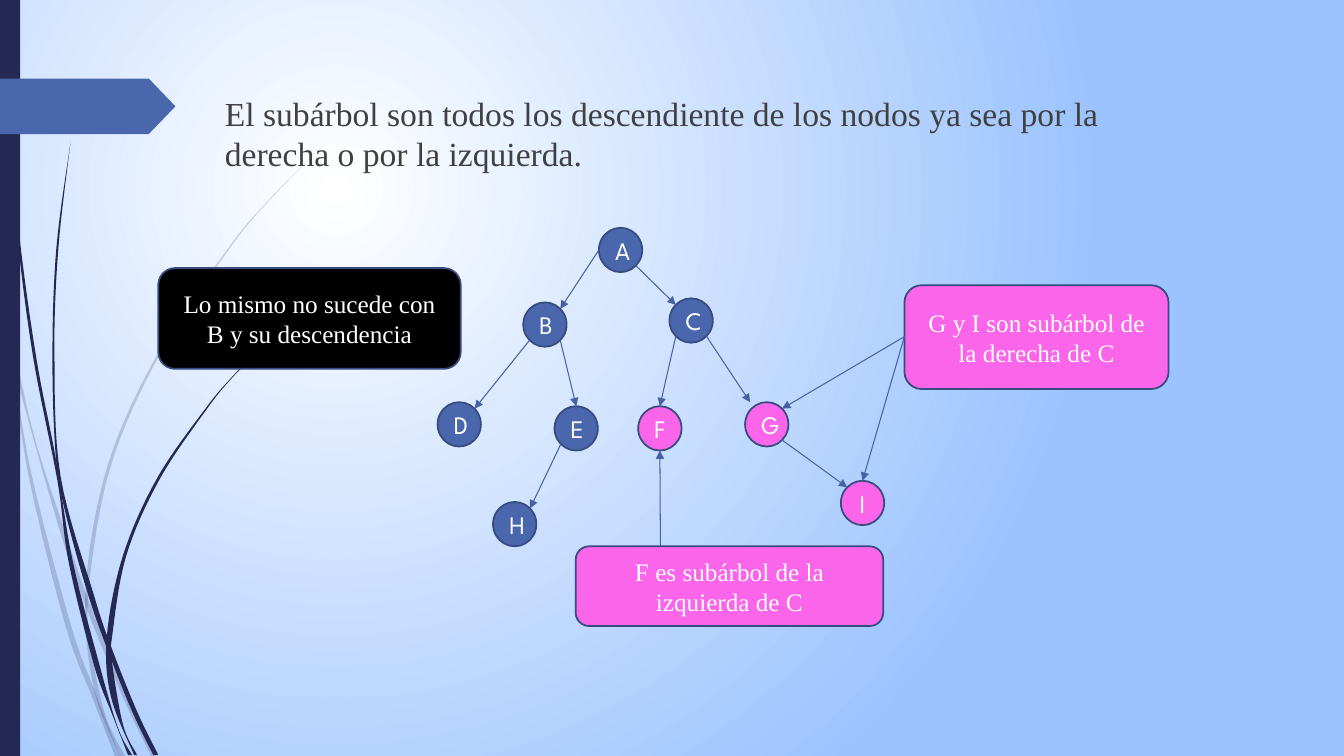
from dataclasses import dataclass
from math import sqrt

from lxml import etree
from pptx import Presentation
from pptx.dml.color import RGBColor
from pptx.enum.shapes import MSO_CONNECTOR, MSO_SHAPE
from pptx.enum.text import MSO_ANCHOR, MSO_AUTO_SIZE, PP_ALIGN
from pptx.oxml.ns import qn
from pptx.util import Inches, Pt

CIRCLE = MSO_SHAPE.FLOWCHART_CONNECTOR
ROUNDED = MSO_SHAPE.ROUNDED_RECTANGLE
RECTANGLE = MSO_SHAPE.RECTANGLE
TAG = MSO_SHAPE.PENTAGON
STRAIGHT = MSO_CONNECTOR.STRAIGHT
CENTER, LEFT = PP_ALIGN.CENTER, PP_ALIGN.LEFT
MIDDLE, TOP = MSO_ANCHOR.MIDDLE, MSO_ANCHOR.TOP
NO_AUTOFIT = MSO_AUTO_SIZE.NONE


@dataclass(frozen=True)
class Theme:
    navy: str = "242852"
    blue: str = "4A66AC"
    outline: str = "374B7F"
    arrow: str = "4761A4"
    pink: str = "FB65E9"
    black: str = "000000"
    white: str = "FFFFFF"
    text: str = "404040"
    sky: str = "9BC3FE"
    serif: str = "Times New Roman"
    label_font: str = "League Spartan"
    intro_size: int = 24
    label_size: int = 18


T = Theme()
SLIDE_W, SLIDE_H = 13.33, 7.5
NODE_W, NODE_H = 0.43, 0.44

INTRO = ("El subárbol son todos los descendiente de los nodos "
         "ya sea por la derecha o por la izquierda.")
NODES = {
    "A": (5.94, 2.26, T.blue), "B": (5.19, 3.0, T.blue), "C": (6.64, 2.96, T.blue),
    "D": (4.34, 3.99, T.blue), "E": (5.5, 4.03, T.blue), "F": (6.33, 4.03, T.pink),
    "G": (7.39, 3.99, T.pink), "H": (4.89, 4.98, T.blue), "I": (8.34, 4.77, T.pink),
}
# Ends are (node, compass point)
EDGES = [
    (("A", "W"), ("B", "NE")), (("A", "SE"), ("C", "NW")),
    (("B", "SW"), ("D", "NE")), (("B", "SE"), ("E", "N")),
    (("C", "SW"), ("F", "N")), (("E", "SW"), ("H", "NE")),
    (("G", "SE"), ("I", "NW")),
]
CALLOUTS = [
    ("G y I son subárbol de la derecha de C", (8.97, 2.83, 2.62, 1.03), T.pink),
    ("F es subárbol de la izquierda de C", (5.71, 5.42, 3.05, 0.79), T.pink),
    ("Lo mismo no sucede con B y su descendencia", (1.57, 2.66, 3, 1), T.black),
]
# Each strand has a forward edge and a returning edge
PALE_STRANDS = [
    ([(0, 2.82), (0.14, 3.45), (0.34, 4.33), (0.62, 5.2), (0.88, 5.96), (1.27, 6.92), (1.55, 7.5)],
     [(1.5, 7.5), (1.23, 6.94), (0.84, 5.99), (0.58, 5.22), (0.17, 3.76), (0, 2.99)]),
    ([(0.11, 3.5), (0.31, 4.69), (0.7, 6.19), (0.93, 6.83), (1.19, 7.5)],
     [(1.14, 7.5), (0.92, 6.93), (0.65, 6.21), (0.28, 4.7), (0.11, 3.5)]),
    ([(3.12, 1.53), (2.68, 1.97), (2.28, 2.44), (1.58, 3.48), (1.07, 4.61), (0.85, 5.84),
      (0.93, 6.83), (1.19, 7.5)],
     [(1.24, 7.5), (1.05, 7.11), (0.91, 6.46), (0.88, 5.84), (1.1, 4.62), (1.6, 3.49),
      (2.29, 2.45), (2.68, 1.98), (3.12, 1.53)]),
]
DARK_STRANDS = [
    ([(0.04, 0), (0.08, 1.09), (0.19, 2.32), (0.36, 3.55), (0.55, 4.53), (0.72, 5.56),
      (0.98, 6.57), (1.17, 7.22), (1.31, 7.49)],
     [(1.27, 7.49), (1.11, 7.08), (0.93, 6.59), (0.68, 5.57), (0.57, 4.77), (0.33, 3.55),
      (0.17, 2.33), (0.07, 1.1), (0.03, 0)]),
    ([(0.7, 1.41), (0.56, 2.45), (0.52, 3.49), (0.55, 4.49), (0.64, 5.05), (0.88, 5.92),
      (1.11, 6.56), (1.32, 7.08), (1.52, 7.49)],
     [(1.57, 7.49), (1.36, 7.06), (1.1, 6.41), (0.93, 5.9), (0.6, 4.72), (0.54, 3.49),
      (0.58, 2.45), (0.7, 1.41)]),
    ([(2.6, 3.44), (2.31, 3.73), (2.04, 4.05), (1.56, 4.74), (1.22, 5.51), (1.06, 6.31),
      (1.1, 6.91), (1.33, 7.49)],
     [(1.36, 7.49), (1.22, 7.19), (1.11, 6.56), (1.11, 6.33), (1.25, 5.52), (1.58, 4.76),
      (2.05, 4.06), (2.31, 3.74), (2.61, 3.44)]),
]


def set_all(target, values):
    for name, value in values.items():
        setattr(target, name, value)


def paint(sp, fill, line=None):
    sp.shadow.inherit = False
    sp.fill.solid()
    sp.fill.fore_color.rgb = RGBColor.from_string(fill)
    if line:
        sp.line.color.rgb = RGBColor.from_string(line)
        sp.line.width = Pt(1.25)
    else:
        sp.line.fill.background()


def write(tf, text, font, size, color, align=CENTER, anchor=MIDDLE):
    set_all(tf, {"word_wrap": True, "auto_size": NO_AUTOFIT, "vertical_anchor": anchor})
    p = tf.paragraphs[0]
    p.alignment = align
    r = p.add_run()
    r.text = text
    set_all(r.font, {"name": font, "size": Pt(size)})
    r.font.color.rgb = RGBColor.from_string(color)
    return p


def add_box(s, kind, box, fill, line=None):
    sp = s.shapes.add_shape(kind, *map(Inches, box))
    paint(sp, fill, line)
    return sp


def add_label(s, kind, box, fill, text, font):
    sp = add_box(s, kind, box, fill, T.outline)
    write(sp.text_frame, text, font, T.label_size, T.white)


def smooth(points, steps=8):
    """Return points along a Catmull-Rom curve through the given ones."""
    padded = [points[0], *points, points[-1]]
    curve = []
    for a, b, c, d in zip(padded, padded[1:], padded[2:], padded[3:]):
        for t in (i / steps for i in range(steps)):
            curve.append(tuple(
                q + t / 2 * (r - o + t * (2 * o - 5 * q + 4 * r - u + t * (3 * (q - r) + u - o)))
                for o, q, r, u in zip(a, b, c, d)))
    return curve + [points[-1]]


def add_strand(s, edges, alpha=None):
    start, *rest = [(Inches(x), Inches(y)) for edge in edges for x, y in smooth(edge)]
    builder = s.shapes.build_freeform(*start)
    builder.add_line_segments(rest, close=True)
    sp = builder.convert_to_shape()
    paint(sp, T.navy)
    if alpha:
        color = sp.fill._xPr.find(".//" + qn("a:srgbClr"))
        etree.SubElement(color, qn("a:alpha"), val=str(alpha * 1000))


def node_point(name, compass):
    """Return the point of a node's rim in a compass direction."""
    x, y, _ = NODES[name]
    dx = ("E" in compass) - ("W" in compass)
    dy = ("S" in compass) - ("N" in compass)
    reach = sqrt(dx * dx + dy * dy)
    return x + NODE_W / 2 * (1 + dx / reach), y + NODE_H / 2 * (1 + dy / reach)


def add_arrow(s, start, end):
    cxn = s.shapes.add_connector(STRAIGHT, *map(Inches, (*start, *end)))
    cxn.line.color.rgb = RGBColor.from_string(T.arrow)
    cxn.line.width = Pt(0.75)
    etree.SubElement(cxn.line._get_or_add_ln(), qn("a:tailEnd"), type="triangle")
    etree.SubElement(cxn._element.spPr, qn("a:effectLst"))


def set_background(s):
    fill = s.background.fill
    fill.gradient()
    for stop, color in zip(fill.gradient_stops, (T.white, T.sky)):
        stop.color.rgb = RGBColor.from_string(color)
    grad = s.background._cSld.find(".//" + qn("a:gradFill"))
    grad.remove(grad.find(qn("a:lin")))
    circle = etree.SubElement(grad, qn("a:path"), {"path": "circle"})
    etree.SubElement(circle, qn("a:fillToRect"), l="50000", t="50000", r="100000", b="100000")


def add_decoration(s):
    for edges in PALE_STRANDS:
        add_strand(s, edges, alpha=20)
    for edges in DARK_STRANDS:
        add_strand(s, edges)
    add_box(s, RECTANGLE, (0, 0, 0.2, SLIDE_H), T.navy)
    add_box(s, TAG, (0, 0.78, 1.74, 0.55), T.blue).adjustments[0] = 0.48


def add_intro(s):
    title, body = s.placeholders
    title._element.getparent().remove(title._element)
    set_all(body, {"left": Inches(2.13), "top": Inches(0.87),
                   "width": Inches(9.75), "height": Inches(0.71)})
    p = write(body.text_frame, INTRO, T.serif, T.intro_size, T.text, LEFT, TOP)
    p.space_before = Pt(10)
    pPr = p._p.get_or_add_pPr()
    pPr.set("marL", "0")
    pPr.set("indent", "0")
    etree.SubElement(pPr, qn("a:buNone"))


def main():
    prs = Presentation()
    set_all(prs, {"slide_width": Inches(SLIDE_W), "slide_height": Inches(SLIDE_H)})
    s = prs.slides.add_slide(prs.slide_layouts[1])
    set_background(s)
    add_intro(s)
    add_decoration(s)
    for name, (x, y, fill) in NODES.items():
        add_label(s, CIRCLE, (x, y, NODE_W, NODE_H), fill, name, T.label_font)
    for text, box, fill in CALLOUTS:
        add_label(s, ROUNDED, box, fill, text, T.serif)
    for start, end in EDGES:
        add_arrow(s, node_point(*start), node_point(*end))
    add_arrow(s, node_point("C", "SE"), (7.44, 3.99))
    for target in (("G", "NE"), ("I", "N")):
        add_arrow(s, (8.97, 3.34), node_point(*target))
    add_arrow(s, (6.55, 5.42), node_point("F", "S"))
    prs.save("out.pptx")


if __name__ == "__main__":
    main()
